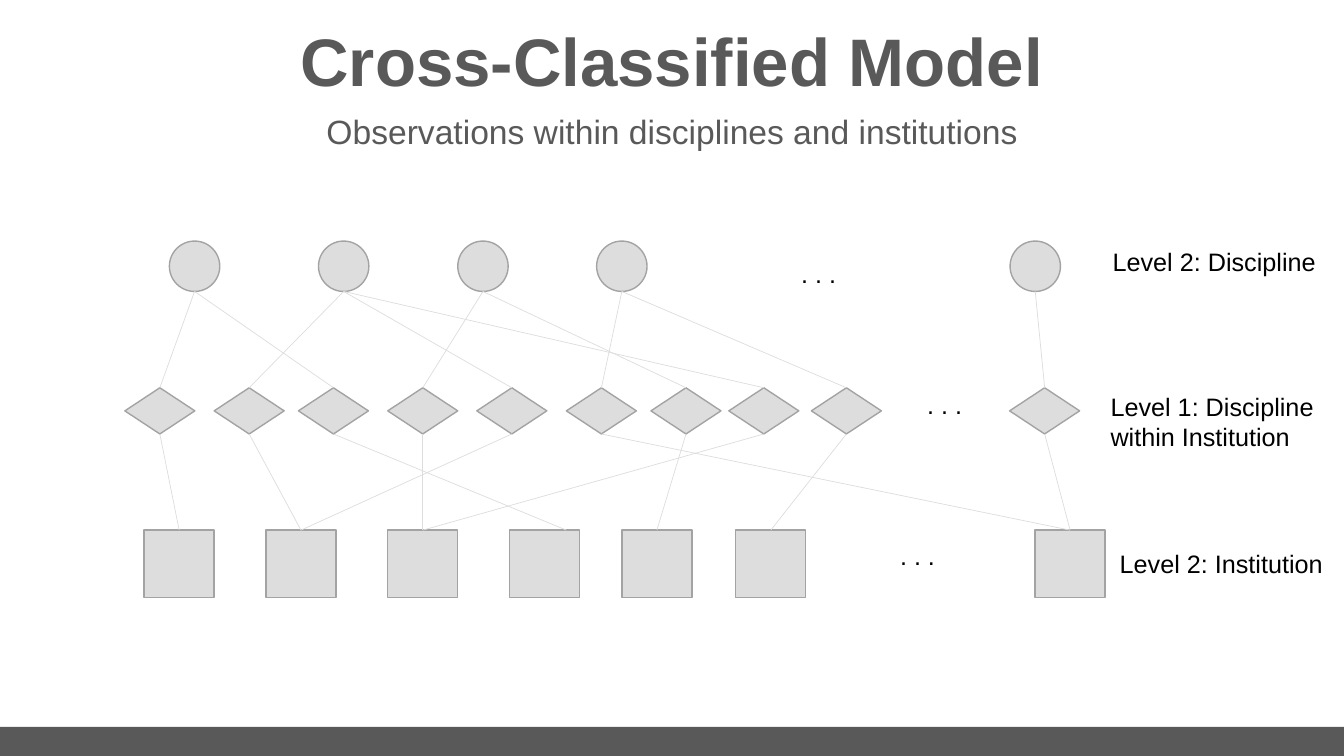
from dataclasses import dataclass

from lxml import etree
from pptx import Presentation
from pptx import util as u
from pptx.dml.color import RGBColor
from pptx.enum import shapes, text
from pptx.oxml.ns import qn


@dataclass(frozen=True)
class Theme:
    font: str = "Arial"
    dark: str = "595959"
    black: str = "000000"
    fill: str = "DDDDDD"
    outline: str = "A3A3A3"
    title_size: float = 48
    subtitle_size: float = 24
    label_size: float = 18


class Diagram:
    def __init__(self, slide, theme):
        self.slide = slide
        self.theme = theme

    def format_font(self, paragraph, size, color, bold=False):
        font = paragraph.font
        font.name, font.size, font.bold = self.theme.font, u.Pt(size), bold
        font.color.rgb = RGBColor.from_string(color)

    def heading(self, placeholder, wording, top, height, size, bold=False, before=0):
        placeholder.left, placeholder.top = u.Pt(0), u.Pt(top)
        placeholder.width, placeholder.height = u.Pt(960), u.Pt(height)
        frame = placeholder.text_frame
        frame.text = wording
        frame.auto_size = text.MSO_AUTO_SIZE.NONE
        frame.vertical_anchor = text.MSO_ANCHOR.MIDDLE
        paragraph = frame.paragraphs[0]
        paragraph.alignment = text.PP_ALIGN.CENTER
        paragraph.line_spacing = 0.9
        paragraph.space_before = u.Pt(before)
        properties = paragraph._p.get_or_add_pPr()
        properties.set("marL", "0")
        properties.set("indent", "0")
        etree.SubElement(properties, qn("a:buNone"))
        self.format_font(paragraph, size, self.theme.dark, bold)

    def block(self, kind, left, top, width, height, fill, outline=None):
        shape = self.slide.shapes.add_shape(
            kind, u.Pt(left), u.Pt(top), u.Pt(width), u.Pt(height))
        shape.shadow.inherit = False
        shape.fill.solid()
        shape.fill.fore_color.rgb = RGBColor.from_string(fill)
        if outline:
            shape.line.color.rgb = RGBColor.from_string(outline)
            shape.line.width = u.Pt(1)
        else:
            shape.line.fill.background()

    def row(self, kind, centers, top, width, height):
        for center in centers:
            self.block(kind, center - width / 2, top, width, height,
                       self.theme.fill, self.theme.outline)

    def link(self, start_x, start_y, end_x, end_y):
        connector = self.slide.shapes.add_connector(
            shapes.MSO_CONNECTOR.STRAIGHT,
            u.Pt(start_x), u.Pt(start_y), u.Pt(end_x), u.Pt(end_y))
        connector.line.color.rgb = RGBColor.from_string(self.theme.fill)
        connector.line.width = u.Pt(0.5)
        etree.SubElement(connector._element.spPr, qn("a:effectLst"))

    def label(self, wording, left, top, width, height=29, wrap=False):
        box = self.slide.shapes.add_textbox(
            u.Pt(left), u.Pt(top), u.Pt(width), u.Pt(height))
        frame = box.text_frame
        frame.text = wording
        frame.word_wrap = wrap
        frame.auto_size = text.MSO_AUTO_SIZE.SHAPE_TO_FIT_TEXT
        self.format_font(frame.paragraphs[0], self.theme.label_size, self.theme.black)


def main():
    """Build the cross-classified model slide."""
    presentation = Presentation()
    presentation.slide_width, presentation.slide_height = u.Pt(960), u.Pt(540)
    slide = presentation.slides.add_slide(presentation.slide_layouts[1])
    theme = Theme()
    diagram = Diagram(slide, theme)
    kinds = shapes.MSO_SHAPE

    diagram.block(kinds.RECTANGLE, 0, 519.2, 960, 20.8, theme.dark)
    diagram.heading(slide.shapes.title, "Cross-Classified Model",
                    15.8, 61.2, theme.title_size, bold=True)
    diagram.heading(slide.placeholders[1], "Observations within disciplines and institutions",
                    79.2, 33.1, theme.subtitle_size, before=10)

    disciplines = [139, 245.5, 345, 444.2, 739.5]
    observations = [114.2, 178, 238.2, 302, 365.6, 429.6, 490, 545.6, 604.6, 746.2]
    institutions = [128, 215, 302, 389, 469.2, 550.6, 764.4]
    circle_top, diamond_top, square_top = 172.2, 277, 378.7
    circle_size, diamond_height = 36, 33
    diagram.row(kinds.FLOWCHART_CONNECTOR, disciplines, circle_top, circle_size, circle_size)
    diagram.row(kinds.FLOWCHART_PROCESS, institutions, square_top, 50, 48.3)
    diagram.row(kinds.FLOWCHART_DECISION, observations, diamond_top, 50, diamond_height)

    discipline_of = [0, 1, 0, 2, 1, 3, 2, 1, 3, 4]
    institution_of = [0, 1, 3, 2, 1, 6, 4, 2, 5, 6]
    end_shift = {3: 15.6}
    for center, discipline, institution in zip(observations, discipline_of, institution_of):
        diagram.link(disciplines[discipline], circle_top + circle_size, center, diamond_top)
        diagram.link(center, diamond_top + diamond_height,
                     institutions[institution] + end_shift.get(institution, 0), square_top)

    for left, top in [(565.2, 180.7), (655.2, 274.3), (635.8, 382.3)]:
        diagram.label(". . .", left, top, 44.6)
    diagram.label("Level 2: Discipline", 787.7, 172.1, 161.3)
    diagram.label("Level 2: Institution", 792.7, 388.1, 161.3)
    diagram.label("Level 1: Discipline within Institution", 786.2, 275.8, 161.3, 51, wrap=True)

    presentation.save("out.pptx")


if __name__ == "__main__":
    main()
